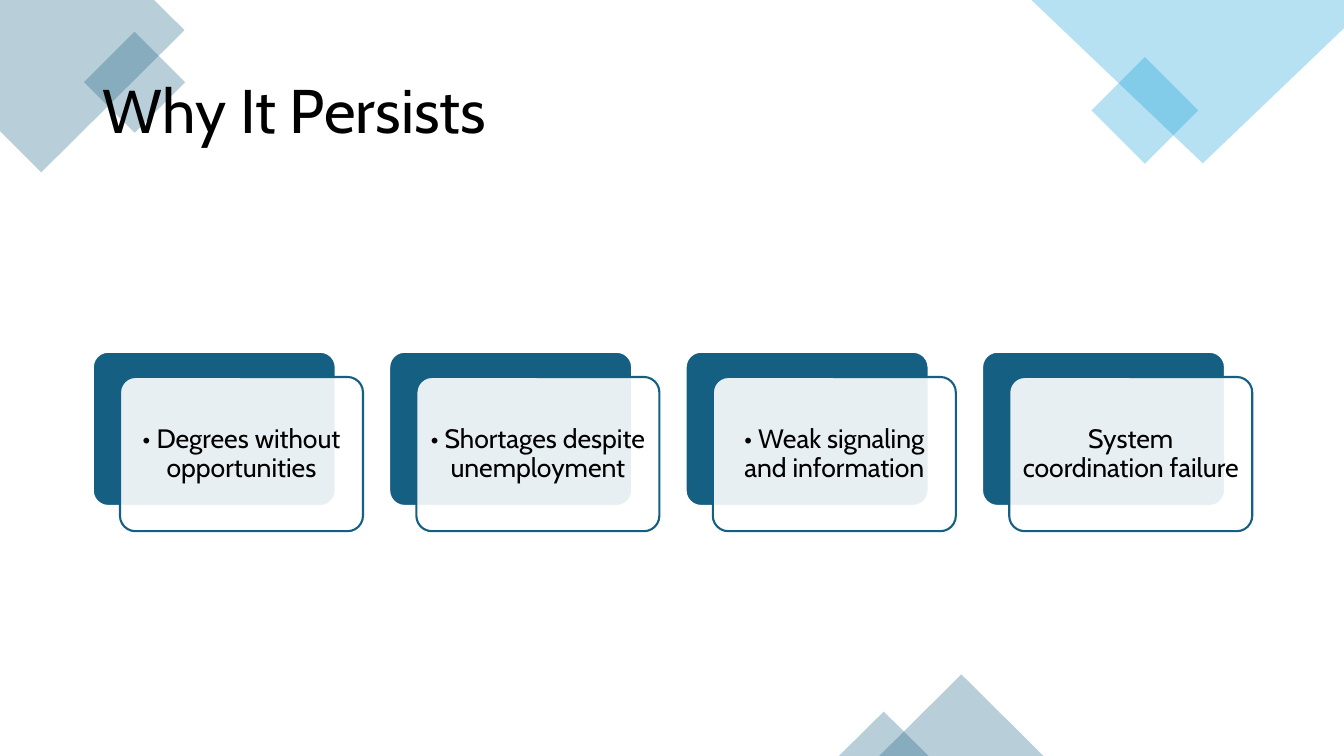
"""Build the "Why It Persists" slide with four offset cards and corner decorations."""
from dataclasses import dataclass

import pptx
import pptx.dml.color
import pptx.enum.shapes
import pptx.enum.text
import pptx.oxml
import pptx.oxml.ns
import pptx.util

Inches = pptx.util.Inches
ShapeKind = pptx.enum.shapes.MSO_SHAPE
Align = pptx.enum.text.PP_ALIGN

TITLE = "Why It Persists"
REASONS = [
    "• Degrees without opportunities",
    "• Shortages despite unemployment",
    "• Weak signaling and information",
    "System coordination failure",
]


@dataclass(frozen=True)
class Theme:
    """Colours, font and sizes of the slide."""
    teal: str = "156082"
    sky: str = "0F9ED5"
    white: str = "FFFFFF"
    black: str = "000000"
    font: str = "Cabin"
    title_size: int = 44
    card_size: int = 19
    line_width: float = 1.5
    decoration_opacity: int = 30
    card_opacity: int = 90


THEME = Theme()
CORNERS = [
    ([(1.53, 0), (0, 0), (0, 1.3), (0.41, 1.71), (1.83, 0.3)], THEME.teal),
    ([(13.33, 0), (10.23, 0), (11.93, 1.62), (13.33, 0.28)], THEME.sky),
]
DIAMONDS = [
    ((0.98, 0.46, 0.71, 0.71), THEME.teal),
    ((10.98, 0.72, 0.75, 0.75), THEME.sky),
]
TRIANGLES = [(8.72, 6.69, 1.63, 0.81), (8.32, 7.06, 0.89, 0.44)]
TITLE_BOX = (0.92, 0.4, 11.5, 1.45)
CARD_LEFT, CARD_TOP, CARD_PITCH = 0.92, 3.49, 2.94
CARD_WIDTH, CARD_HEIGHT = 2.41, 1.53
OFFSET_X, OFFSET_Y = 0.27, 0.25
CARD_INSET = 0.07


def paint(shape, color, opacity=100, line=None):
    """Set a flat fill, its opacity and an optional outline."""
    shape.shadow.inherit = False
    shape.fill.solid()
    shape.fill.fore_color.rgb = pptx.dml.color.RGBColor.from_string(color)
    if opacity < 100:
        fill_color = shape.element.spPr.find(".//" + pptx.oxml.ns.qn("a:srgbClr"))
        alpha = pptx.oxml.parse_xml(
            f'<a:alpha {pptx.oxml.ns.nsdecls("a")} val="{opacity * 1000}"/>')
        fill_color.append(alpha)
    if line:
        shape.line.color.rgb = pptx.dml.color.RGBColor.from_string(line)
        shape.line.width = pptx.util.Pt(THEME.line_width)
    else:
        shape.line.fill.background()


def add_block(slide, kind, box, color, **paint_options):
    """Add a painted preset shape."""
    shape = slide.shapes.add_shape(kind, *map(Inches, box))
    paint(shape, color, **paint_options)
    return shape


def write(shape, text, size, align, inset=None):
    """Write one vertically centred paragraph."""
    frame = shape.text_frame
    frame.text = text
    frame.word_wrap = True
    frame.auto_size = pptx.enum.text.MSO_AUTO_SIZE.NONE
    frame.vertical_anchor = pptx.enum.text.MSO_ANCHOR.MIDDLE
    if inset is not None:
        frame.margin_left = frame.margin_right = Inches(inset)
        frame.margin_top = frame.margin_bottom = Inches(inset)
    paragraph = frame.paragraphs[0]
    paragraph.alignment = align
    paragraph.line_spacing = 0.9
    font = paragraph.runs[0].font
    font.name = THEME.font
    font.size = pptx.util.Pt(size)
    font.color.rgb = pptx.dml.color.RGBColor.from_string(THEME.black)


def add_decorations(slide):
    """Draw the translucent corner pieces, diamonds and triangles."""
    opacity = THEME.decoration_opacity
    for points, color in CORNERS:
        start, *rest = [(Inches(x), Inches(y)) for x, y in points]
        builder = slide.shapes.build_freeform(*start)
        builder.add_line_segments(rest, close=True)
        paint(builder.convert_to_shape(), color, opacity=opacity)
    for box, color in DIAMONDS:
        diamond = add_block(slide, ShapeKind.RECTANGLE, box, color, opacity=opacity)
        diamond.rotation = 315
    for box in TRIANGLES:
        add_block(slide, ShapeKind.ISOSCELES_TRIANGLE, box, THEME.teal, opacity=opacity)


def add_title(slide):
    """Place the title above the decorations."""
    title = slide.shapes.title
    title.left, title.top, title.width, title.height = map(Inches, TITLE_BOX)
    write(title, TITLE, THEME.title_size, Align.LEFT)
    title.element.getparent().append(title.element)


def add_card(slide, left, reason):
    """Add a teal backing with an offset translucent card carrying a reason."""
    size = (CARD_WIDTH, CARD_HEIGHT)
    kind = ShapeKind.ROUNDED_RECTANGLE
    backing = add_block(slide, kind, (left, CARD_TOP, *size), THEME.teal, line=THEME.white)
    card = add_block(slide, kind, (left + OFFSET_X, CARD_TOP + OFFSET_Y, *size),
                     THEME.white, opacity=THEME.card_opacity, line=THEME.teal)
    for shape in (backing, card):
        shape.adjustments[0] = 0.1
    write(card, reason, THEME.card_size, Align.CENTER, inset=CARD_INSET)


def main():
    """Build and save the slide."""
    presentation = pptx.Presentation()
    presentation.slide_width = Inches(13.33)
    presentation.slide_height = Inches(7.5)
    slide = presentation.slides.add_slide(presentation.slide_layouts[5])
    add_decorations(slide)
    add_title(slide)
    for index, reason in enumerate(REASONS):
        add_card(slide, CARD_LEFT + index * CARD_PITCH, reason)
    presentation.save("out.pptx")


if __name__ == "__main__":
    main()
